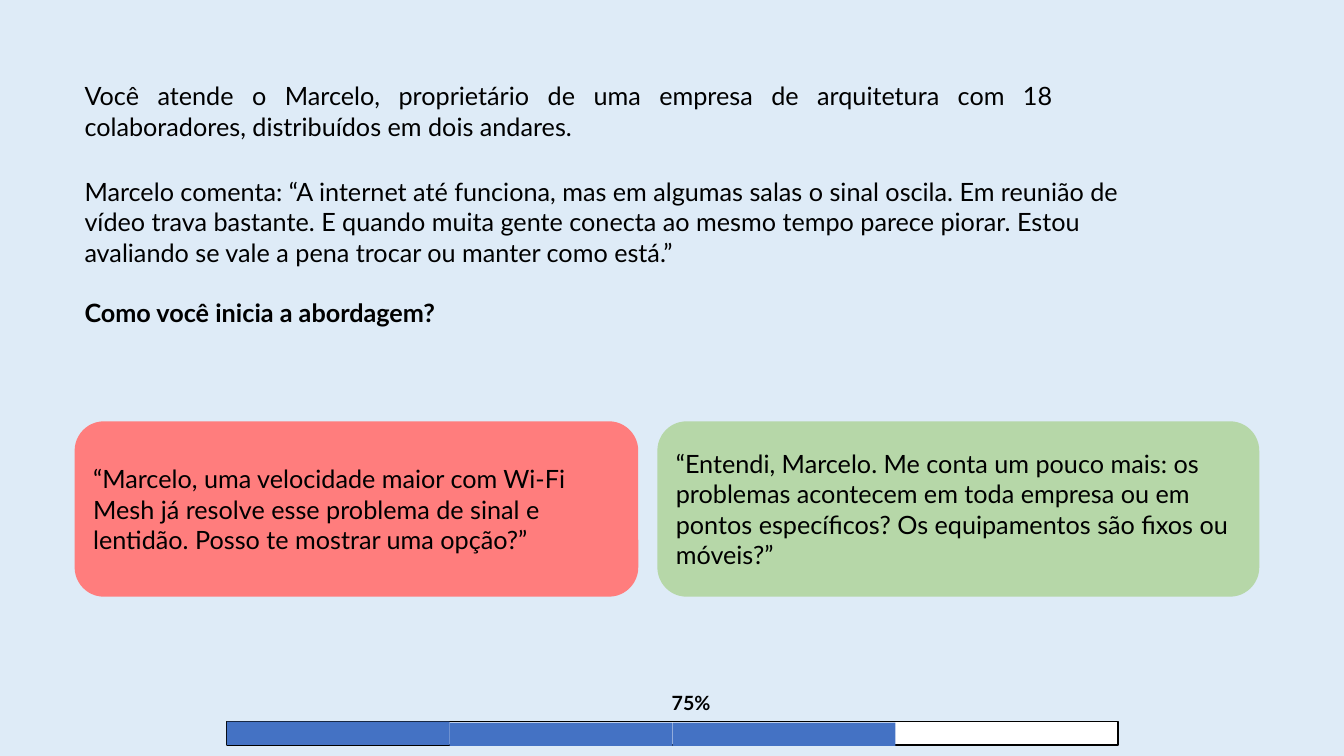
from dataclasses import dataclass

from pptx import Presentation
from pptx import util as u
from pptx.dml.color import RGBColor
from pptx.enum import shapes, text

PX = 9144  # EMU per px, 100 px to the inch
FONT = "Lato"
BLACK, WHITE, BLUE = "000000", "FFFFFF", "4472C4"
LINE_GAP = 21.6
BAR_LEFT, BAR_TOP, BAR_H, STEP_W, STEPS = 225, 716, 23, 221, 4
STEP_TOPS = (716, 717, 717)


@dataclass
class Box:
    x: int
    y: int
    w: int
    h: int

    def emu(self) -> tuple[int, ...]:
        return tuple(v * PX for v in (self.x, self.y, self.w, self.h))


@dataclass
class Answer:
    box: Box
    fill: str
    quote: str


ANSWERS = [
    Answer(Box(74, 418, 559, 174), "FF7D7D",
           "“Marcelo, uma velocidade maior com Wi-Fi Mesh já resolve esse problema "
           "de sinal e lentidão. Posso te mostrar uma opção?”"),
    Answer(Box(652, 418, 597, 174), "B6D7A8",
           "“Entendi, Marcelo. Me conta um pouco mais: os problemas acontecem em toda "
           "empresa ou em pontos específicos? Os equipamentos são fixos ou móveis?”"),
]


def rgb(color: str) -> RGBColor:
    return RGBColor.from_string(color)


def write(p, words: str, *, size: int = 18, bold: bool = False,
          align=text.PP_ALIGN.LEFT, before: float = 0) -> None:
    p.alignment = align
    p.space_before = u.Pt(before)
    r = p.add_run()
    r.text = words
    r.font.name, r.font.size, r.font.bold = FONT, u.Pt(size), bold
    r.font.color.rgb = rgb(BLACK)


def add_text(parent, box: Box):
    tf = parent.add_textbox(*box.emu()).text_frame
    tf.word_wrap = True
    tf.auto_size = text.MSO_AUTO_SIZE.SHAPE_TO_FIT_TEXT
    return tf


def add_shape(parent, kind, box: Box, fill: str, line: str | None = None):
    sp = parent.add_shape(kind, *box.emu())
    sp.shadow.inherit = False
    sp.fill.solid()
    sp.fill.fore_color.rgb = rgb(fill)
    if line:
        sp.line.color.rgb = rgb(line)
        sp.line.width = u.Pt(1)
    else:
        sp.line.fill.background()
    return sp


def add_scenario(s) -> None:
    tf = add_text(s.shapes, Box(74, 75, 980, 71))
    write(tf.paragraphs[0],
          "Você atende o Marcelo, proprietário de uma empresa de arquitetura com 18 "
          "colaboradores, distribuídos em dois andares.", align=text.PP_ALIGN.JUSTIFY)
    tf = add_text(s.shapes, Box(74, 170, 1077, 162))
    write(tf.paragraphs[0],
          "Marcelo comenta: “A internet até funciona, mas em algumas salas o sinal oscila. "
          "Em reunião de vídeo trava bastante. E quando muita gente conecta ao mesmo tempo "
          "parece piorar. Estou avaliando se vale a pena trocar ou manter como está.”")
    write(tf.add_paragraph(), "Como você inicia a abordagem?", bold=True, before=LINE_GAP)


def add_answer(s, answer: Answer) -> None:
    sp = add_shape(s.shapes, shapes.MSO_SHAPE.ROUNDED_RECTANGLE, answer.box, answer.fill)
    sp.adjustments[0] = 0.167
    tf = sp.text_frame
    tf.word_wrap = True
    tf.vertical_anchor = text.MSO_ANCHOR.MIDDLE
    tf.margin_left = tf.margin_right = tf.margin_top = tf.margin_bottom = 10 * PX
    write(tf.paragraphs[0], answer.quote)


def add_progress(s) -> None:
    bar = s.shapes.add_group_shape().shapes
    rect = shapes.MSO_SHAPE.RECTANGLE
    add_shape(bar, rect, Box(BAR_LEFT, BAR_TOP, STEPS * STEP_W, BAR_H), WHITE, BLACK)
    tf = add_text(bar, Box(618, 681, 135, 57))
    write(tf.paragraphs[0], "75%", size=14, bold=True, align=text.PP_ALIGN.CENTER)
    for i, top in enumerate(STEP_TOPS):
        add_shape(bar, rect, Box(BAR_LEFT + i * STEP_W, top, STEP_W, BAR_H), BLUE)


def main() -> None:
    prs = Presentation()
    prs.slide_width, prs.slide_height = 1333 * PX, 750 * PX
    s = prs.slides.add_slide(prs.slide_layouts[6])
    s.background.fill.solid()
    s.background.fill.fore_color.rgb = rgb("DEEBF7")
    add_scenario(s)
    for answer in ANSWERS:
        add_answer(s, answer)
    add_progress(s)
    prs.save("out.pptx")


if __name__ == "__main__":
    main()
